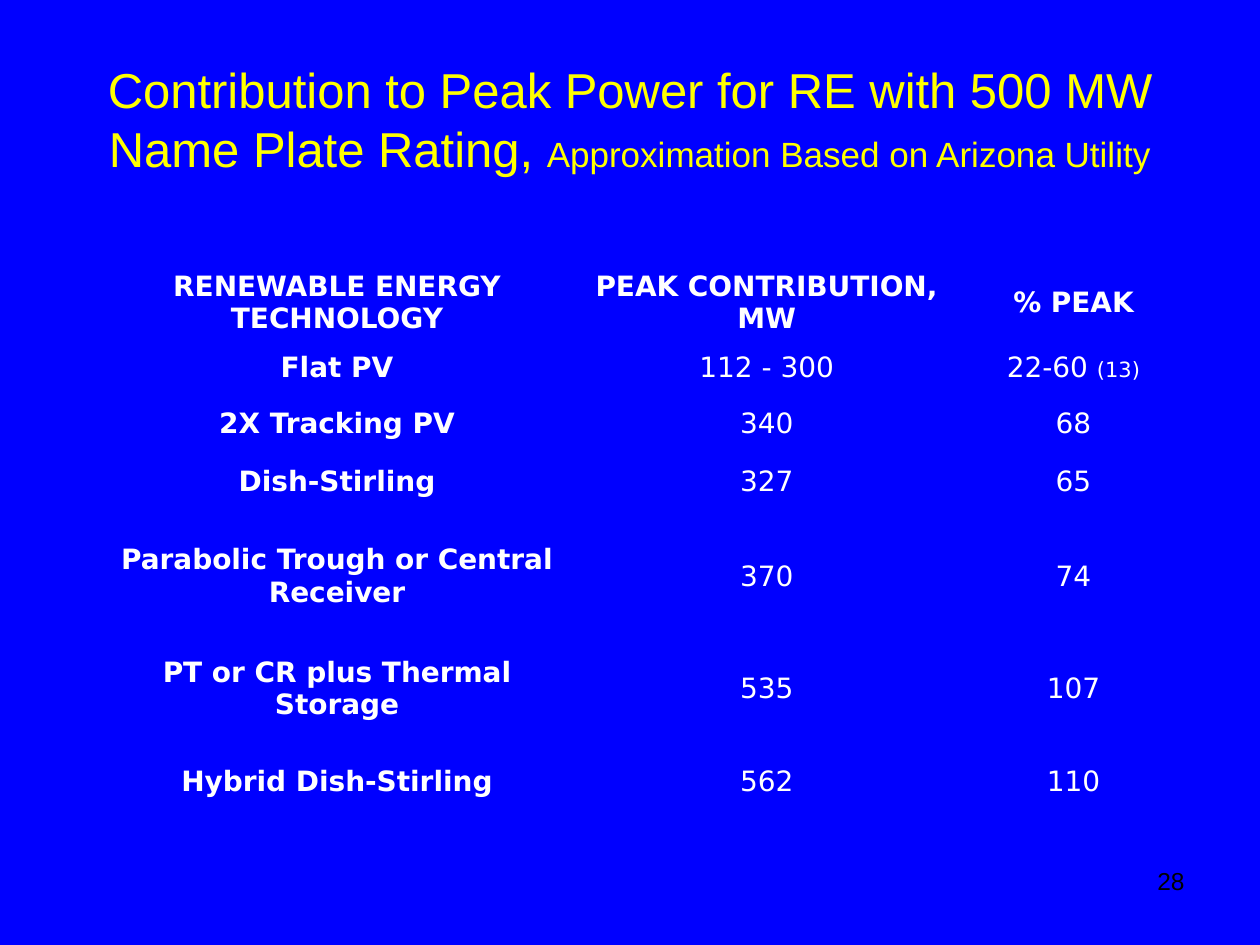
from dataclasses import dataclass

from lxml.etree import SubElement
from pptx import Presentation
from pptx.dml.color import RGBColor
from pptx.enum.text import MSO_ANCHOR as Anchor, PP_ALIGN as Align
from pptx.oxml.ns import qn
from pptx.util import Inches, Pt

WIDTH, HEIGHT = 10, 7.5
BLUE = RGBColor(0x00, 0x00, 0xFF)
YELLOW = RGBColor(0xFF, 0xFF, 0x00)
WHITE = RGBColor(0xFF, 0xFF, 0xFF)
BLACK = RGBColor(0x00, 0x00, 0x00)
TITLE_FONT, TABLE_FONT = "Arial", "DejaVu Sans"

COLUMN_WIDTHS = (3.55, 3.27, 1.6)
ROW_HEIGHTS = (0.6, 0.43, 0.45, 0.48, 1.02, 0.77, 0.7)
BORDERS = ("a:lnL", "a:lnR", "a:lnT", "a:lnB")


@dataclass(frozen=True)
class Piece:
    text: str
    size: float
    font: str = TABLE_FONT
    color: RGBColor = WHITE
    bold: bool = False


@dataclass(frozen=True)
class Box:
    left: float
    top: float
    width: float
    height: float

    def lengths(self) -> tuple:
        return (Inches(self.left * WIDTH), Inches(self.top * HEIGHT),
                Inches(self.width * WIDTH), Inches(self.height * HEIGHT))


@dataclass(frozen=True)
class Technology:
    name: str
    contribution: str
    percent: str
    note: str = ""


HEADINGS = ("RENEWABLE ENERGY TECHNOLOGY", "PEAK CONTRIBUTION, MW", "% PEAK")
TECHNOLOGIES = (
    Technology("Flat PV", "112 - 300", "22-60 ", "(13)"),
    Technology("2X Tracking PV", "340", "68"),
    Technology("Dish-Stirling", "327", "65"),
    Technology("Parabolic Trough or Central Receiver", "370", "74"),
    Technology("PT or CR plus Thermal Storage", "535", "107"),
    Technology("Hybrid Dish-Stirling", "562", "110"),
)
TITLE = (
    Piece("Contribution to Peak Power for RE with 500 MW Name Plate Rating, ",
          28, TITLE_FONT, YELLOW),
    Piece("Approximation Based on Arizona Utility", 20, TITLE_FONT, YELLOW),
)
PAGE_NUMBER = (Piece("28", 14, TITLE_FONT, BLACK),)


def write_pieces(paragraph, pieces: tuple[Piece, ...], align: Align) -> None:
    paragraph.alignment = align
    for piece in pieces:
        run = paragraph.add_run()
        run.text = piece.text
        run.font.size = Pt(piece.size)
        run.font.name = piece.font
        run.font.bold = piece.bold
        run.font.color.rgb = piece.color


def add_text(slide, box: Box, pieces: tuple[Piece, ...], align: Align,
             anchor: Anchor) -> None:
    frame = slide.shapes.add_textbox(*box.lengths()).text_frame
    frame.word_wrap = True
    frame.vertical_anchor = anchor
    write_pieces(frame.paragraphs[0], pieces, align)


def fill_cell(cell, pieces: tuple[Piece, ...]) -> None:
    cell.margin_left = cell.margin_right = cell.margin_top = Inches(0.01)
    cell.margin_bottom = 0
    cell.vertical_anchor = Anchor.MIDDLE
    properties = cell._tc.get_or_add_tcPr()
    for border in BORDERS:
        SubElement(SubElement(properties, qn(border), w="0"), qn("a:noFill"))
    cell.fill.background()
    write_pieces(cell.text_frame.paragraphs[0], pieces, Align.CENTER)


def table_rows() -> list[tuple[tuple[Piece, ...], ...]]:
    rows = [tuple((Piece(heading, 16, bold=True),) for heading in HEADINGS)]
    for technology in TECHNOLOGIES:
        percent = (Piece(technology.percent, 16),)
        if technology.note:
            percent += (Piece(technology.note, 12),)
        rows.append(((Piece(technology.name, 16, bold=True),),
                     (Piece(technology.contribution, 16),), percent))
    return rows


def add_peak_table(slide, left: float, top: float) -> None:
    box = Box(left, top, sum(COLUMN_WIDTHS) / WIDTH, sum(ROW_HEIGHTS) / HEIGHT)
    table = slide.shapes.add_table(
        len(ROW_HEIGHTS), len(COLUMN_WIDTHS), *box.lengths()).table
    table.first_row = table.horz_banding = False
    for column, width in zip(table.columns, COLUMN_WIDTHS):
        column.width = Inches(width)
    for row, height, contents in zip(table.rows, ROW_HEIGHTS, table_rows()):
        row.height = Inches(height)
        for cell, pieces in zip(row.cells, contents):
            fill_cell(cell, pieces)


def main() -> None:
    presentation = Presentation()
    presentation.slide_width = Inches(WIDTH)
    presentation.slide_height = Inches(HEIGHT)
    slide = presentation.slides.add_slide(presentation.slide_layouts[6])
    slide.background.fill.solid()
    slide.background.fill.fore_color.rgb = BLUE
    add_text(slide, Box(0.05, 0.04, 0.9, 0.17), TITLE, Align.CENTER, Anchor.MIDDLE)
    add_peak_table(slide, 0.09, 0.28)
    add_text(slide, Box(0.72, 0.91, 0.23, 0.07), PAGE_NUMBER, Align.RIGHT, Anchor.TOP)
    presentation.save("out.pptx")


if __name__ == "__main__":
    main()
